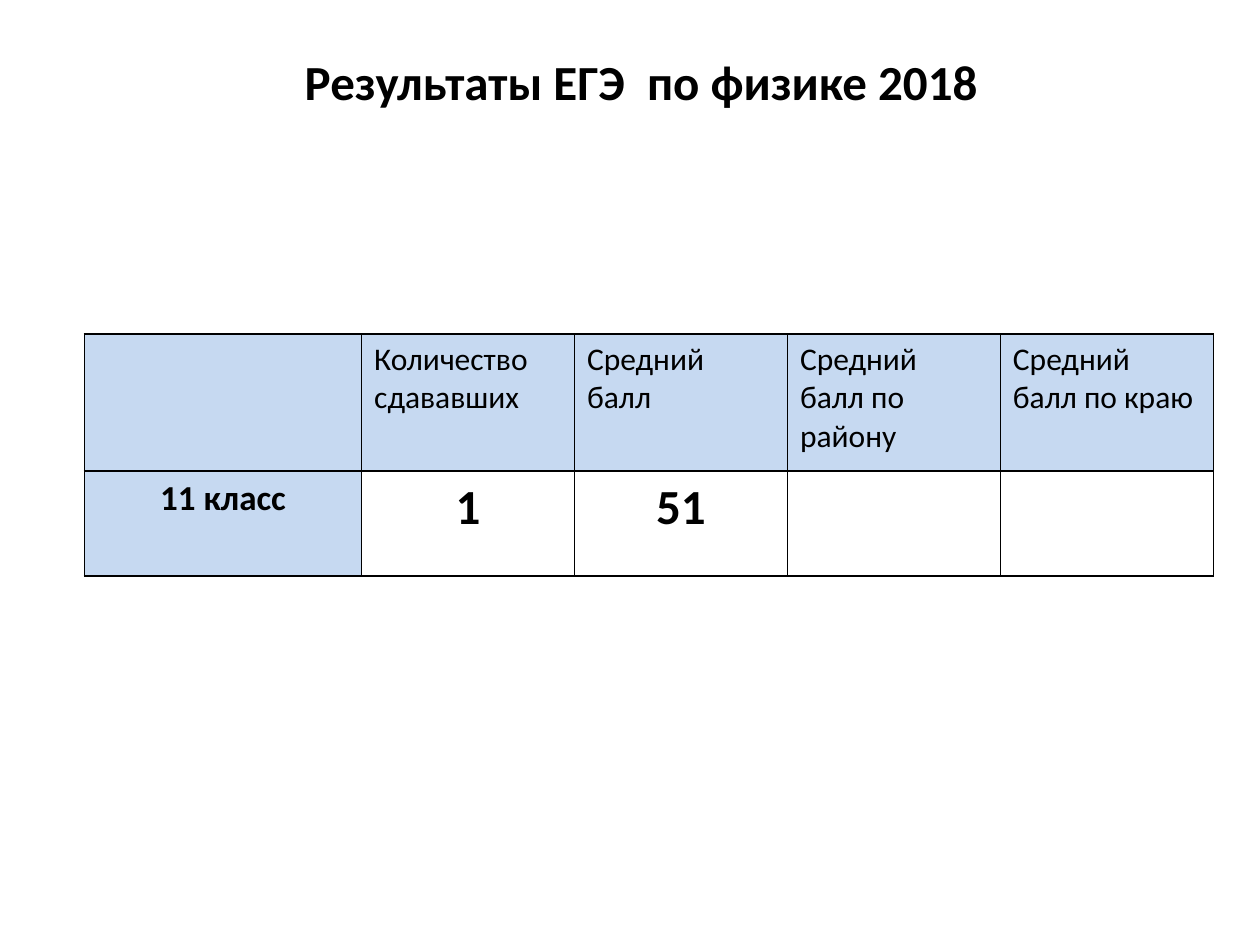
from lxml.etree import SubElement
from pptx import Presentation
from pptx.dml.color import RGBColor
from pptx.enum.text import PP_ALIGN
from pptx.oxml.ns import qn
from pptx.util import Inches, Pt

TITLE = "Результаты ЕГЭ  по физике 2018"
ROWS = [
    ["", "Количество сдававших", "Средний балл",
     "Средний балл по району", "Средний балл по краю"],
    ["11 класс", "1", "51", "", ""],
]
WIDTHS = [2.2] + [1.69] * 4
HEIGHTS = [1.09, 0.83]
FONT, INK, TINT = "Calibri", "000000", "C6D9F1"


def color(code):
    return RGBColor.from_string(code)


def write(frame, text, size, bold, align):
    para = frame.paragraphs[0]
    para.alignment = align
    run = para.add_run()
    run.text = text
    run.font.name = FONT
    run.font.size = Pt(size)
    run.font.bold = bold
    run.font.color.rgb = color(INK)


def border(cell):
    """Draw a 1 pt line on all four sides; call before the fill is set."""
    props = cell._tc.get_or_add_tcPr()
    for side in ("lnL", "lnR", "lnT", "lnB"):
        line = SubElement(props, qn(f"a:{side}"), w=str(Pt(1)))
        fill = SubElement(line, qn("a:solidFill"))
        SubElement(fill, qn("a:srgbClr"), val=INK)


def add_title(slide):
    box = slide.shapes.add_textbox(
        Inches(2.32), Inches(0.36), Inches(5.61), Inches(0.57))
    box.text_frame.word_wrap = False
    write(box.text_frame, TITLE, 28, True, PP_ALIGN.LEFT)


def add_scores(slide):
    table = slide.shapes.add_table(
        len(ROWS), len(WIDTHS), Inches(0.67), Inches(2.65),
        Inches(sum(WIDTHS)), Inches(sum(HEIGHTS))).table
    table.first_row = table.horz_banding = False
    for col, width in zip(table.columns, WIDTHS):
        col.width = Inches(width)
    for row, height in zip(table.rows, HEIGHTS):
        row.height = Inches(height)
    for r, row in enumerate(ROWS):
        for c, text in enumerate(row):
            cell = table.cell(r, c)
            border(cell)
            if r == 0 or c == 0:
                cell.fill.solid()
                cell.fill.fore_color.rgb = color(TINT)
            else:
                cell.fill.background()
            if text:
                size = 18 if r == 0 else 20 if c == 0 else 28
                align = PP_ALIGN.CENTER if r else PP_ALIGN.LEFT
                write(cell.text_frame, text, size, r > 0, align)


def main():
    deck = Presentation()
    deck.slide_width, deck.slide_height = Inches(10), Inches(7.5)
    slide = deck.slides.add_slide(deck.slide_layouts[6])
    add_title(slide)
    add_scores(slide)
    deck.save("out.pptx")


if __name__ == "__main__":
    main()
